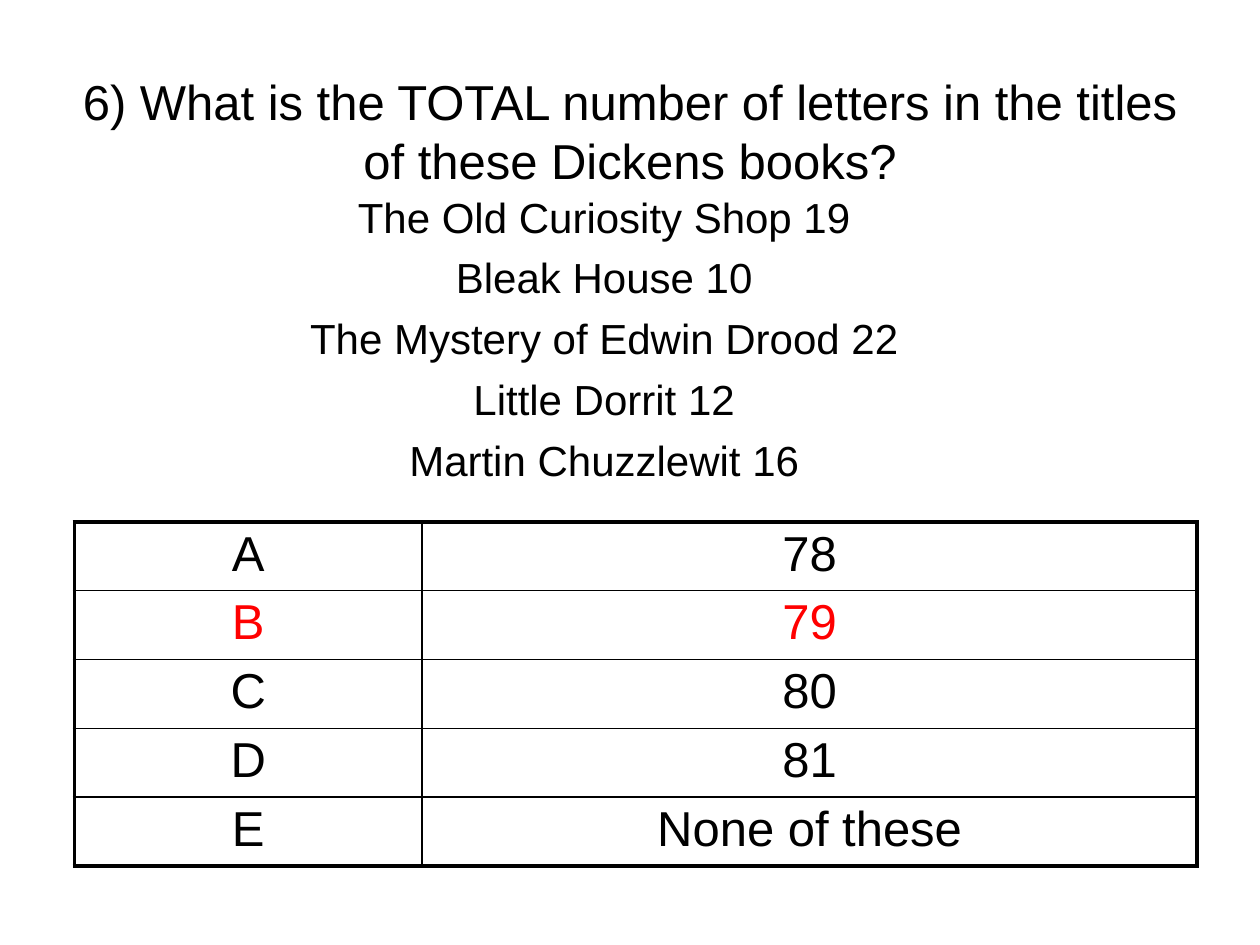
from pptx import Presentation
from pptx import util as u
from pptx.dml.color import RGBColor
from pptx.enum import text
from pptx.oxml import parse_xml
from pptx.oxml.ns import nsdecls

BLACK = RGBColor(0, 0, 0)
RED = RGBColor(255, 0, 0)
THIN, THICK = u.Pt(1), u.Pt(2.25)


def style(paragraph, size, color=BLACK):
    paragraph.alignment = text.PP_ALIGN.CENTER
    paragraph.font.name = "Arial"
    paragraph.font.size = u.Pt(size)
    paragraph.font.color.rgb = color


def add_border(cell, side, width):
    cell._tc.get_or_add_tcPr().append(parse_xml(
        f'<a:{side} {nsdecls("a")} w="{width}"><a:solidFill>'
        f'<a:srgbClr val="{BLACK}"/></a:solidFill></a:{side}>'))


prs = Presentation()
prs.slide_width, prs.slide_height = u.Cm(25.4), u.Cm(19.05)
slide = prs.slides.add_slide(prs.slide_layouts[6])

question = slide.shapes.add_textbox(u.Cm(1.27), u.Cm(1.32), u.Cm(22.86), u.Cm(2.62)).text_frame
question.word_wrap = True
question.vertical_anchor = text.MSO_ANCHOR.MIDDLE
question.text = "6) What is the TOTAL number of letters in the titles of these Dickens books?"
style(question.paragraphs[0], 28)

answers = [("A", "78"), ("B", "79"), ("C", "80"), ("D", "81"), ("E", "None of these")]
correct = "B"
choices = slide.shapes.add_table(
    len(answers), 2, u.Cm(1.5), u.Cm(10.52), u.Cm(22.63), u.Cm(6.75)).table
choices.first_row = choices.horz_banding = False
choices.columns[0].width, choices.columns[1].width = u.Cm(7.01), u.Cm(15.62)
last = len(answers) - 1
for r, answer in enumerate(answers):
    choices.rows[r].height = u.Cm(1.35)
    for c, label in enumerate(answer):
        cell = choices.cell(r, c)
        cell.text = label
        cell.margin_top = cell.margin_bottom = u.Cm(0.1)
        style(cell.text_frame.paragraphs[0], 28, RED if answer[0] == correct else BLACK)
        outer_sides = {"lnL": c == 0, "lnR": c == 1, "lnT": r == 0, "lnB": r == last}
        for side, outer in outer_sides.items():
            add_border(cell, side, THICK if outer else THIN)
        cell.fill.background()

books = ["The Old Curiosity Shop 19", "Bleak House 10", "The Mystery of Edwin Drood 22",
         "Little Dorrit 12", "Martin Chuzzlewit 16"]
titles = slide.shapes.add_textbox(u.Cm(1.27), u.Cm(3.73), u.Cm(21.82), u.Cm(5.59)).text_frame
titles.word_wrap = True
titles.text = "\n".join(books)
for book in titles.paragraphs:
    style(book, 24)
    book.space_before = u.Pt(5.9)

prs.save("out.pptx")
